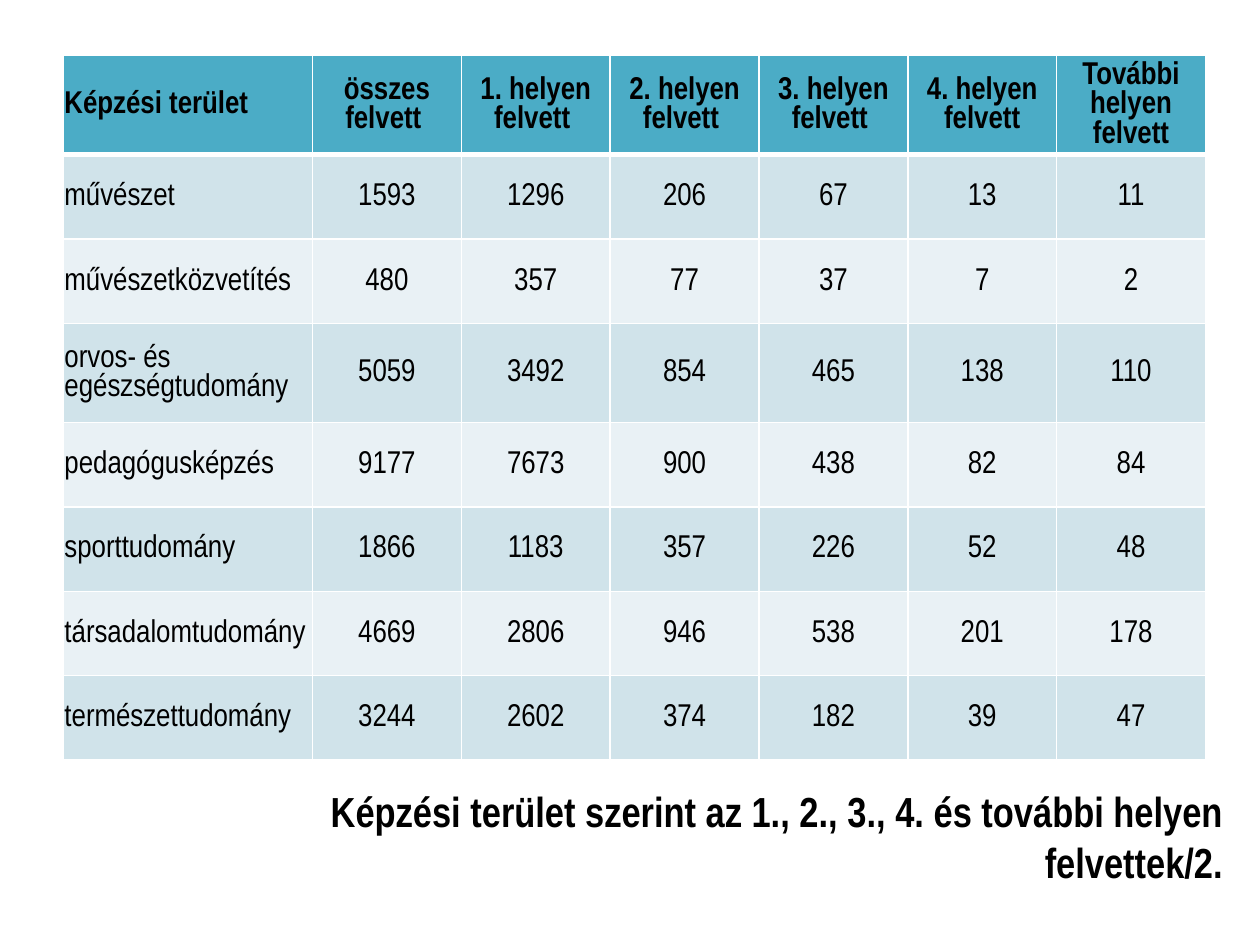
from lxml import etree
from pptx import Presentation
from pptx import util as u
from pptx.dml.color import RGBColor
from pptx.enum import text
from pptx.oxml import ns

FONT = "Arial Narrow"
HEAD = ["Képzési terület", "összes felvett ", "1. helyen felvett ",
        "2. helyen felvett ", "3. helyen felvett ", "4. helyen felvett",
        "További helyen felvett"]
DATA = [
    ["művészet", 1593, 1296, 206, 67, 13, 11],
    ["művészetközvetítés", 480, 357, 77, 37, 7, 2],
    ["orvos- és egészségtudomány", 5059, 3492, 854, 465, 138, 110],
    ["pedagógusképzés", 9177, 7673, 900, 438, 82, 84],
    ["sporttudomány", 1866, 1183, 357, 226, 52, 48],
    ["társadalomtudomány", 4669, 2806, 946, 538, 201, 178],
    ["természettudomány", 3244, 2602, 374, 182, 39, 47],
]
NAME_W, NUM_W = 5.03, 3
TALL, ROW_H = 2, 1.7
TALL_ROWS = (0, 3)


def color(code):
    return RGBColor.from_string(code)


def write(par, words, size, bold, align):
    par.alignment = align
    run = par.add_run()
    run.text = words
    run.font.name = FONT
    run.font.size = u.Pt(size)
    run.font.bold = bold
    run.font.color.rgb = color("000000")


def border(cell, base):
    """White lines on all four sides; base is the width of the bottom one."""
    props = cell._tc.get_or_add_tcPr()
    for side, width in (("L", 1), ("R", 1), ("T", 1), ("B", base)):
        line = etree.SubElement(props, ns.qn("a:ln" + side), w=str(u.Pt(width)))
        fill = etree.SubElement(line, ns.qn("a:solidFill"))
        etree.SubElement(fill, ns.qn("a:srgbClr"), val="FFFFFF")


def style(cell, fill, base):
    border(cell, base)
    cell.fill.solid()
    cell.fill.fore_color.rgb = color(fill)
    cell.vertical_anchor = text.MSO_ANCHOR.MIDDLE
    cell.margin_left = cell.margin_right = cell.margin_top = u.Cm(0.03)
    cell.margin_bottom = 0


def add_grid(slide, left, top):
    rows = [HEAD] + DATA
    highs = [TALL if r in TALL_ROWS else ROW_H for r in range(len(rows))]
    wides = [NAME_W] + [NUM_W] * (len(HEAD) - 1)
    table = slide.shapes.add_table(
        len(rows), len(HEAD), u.Cm(left), u.Cm(top),
        u.Cm(sum(wides)), u.Cm(sum(highs))).table
    for col, wide in zip(table.columns, wides):
        col.width = u.Cm(wide)
    for r, (row, high) in enumerate(zip(rows, highs)):
        table.rows[r].height = u.Cm(high)
        first = r == 0
        fill = "4BACC6" if first else "D0E3EA" if r % 2 else "E9F1F5"
        for c, value in enumerate(row):
            cell = table.cell(r, c)
            style(cell, fill, 3 if first else 1)
            align = text.PP_ALIGN.CENTER if c else text.PP_ALIGN.LEFT
            write(cell.text_frame.paragraphs[0], str(value), 18, first, align)


def add_title(slide, left, top, width, height):
    box = slide.shapes.add_textbox(*map(u.Cm, (left, top, width, height)))
    frame = box.text_frame
    frame.word_wrap = True
    write(frame.paragraphs[0],
          "Képzési terület szerint az 1., 2., 3., 4. és további helyen felvettek/2.",
          24, True, text.PP_ALIGN.RIGHT)


def main():
    deck = Presentation()
    deck.slide_width, deck.slide_height = u.Cm(25.4), u.Cm(19.05)
    slide = deck.slides.add_slide(deck.slide_layouts[6])
    add_grid(slide, 1.27, 1.12)
    add_title(slide, 4.9, 15.72, 20, 3.07)
    deck.save("out.pptx")


if __name__ == "__main__":
    main()
